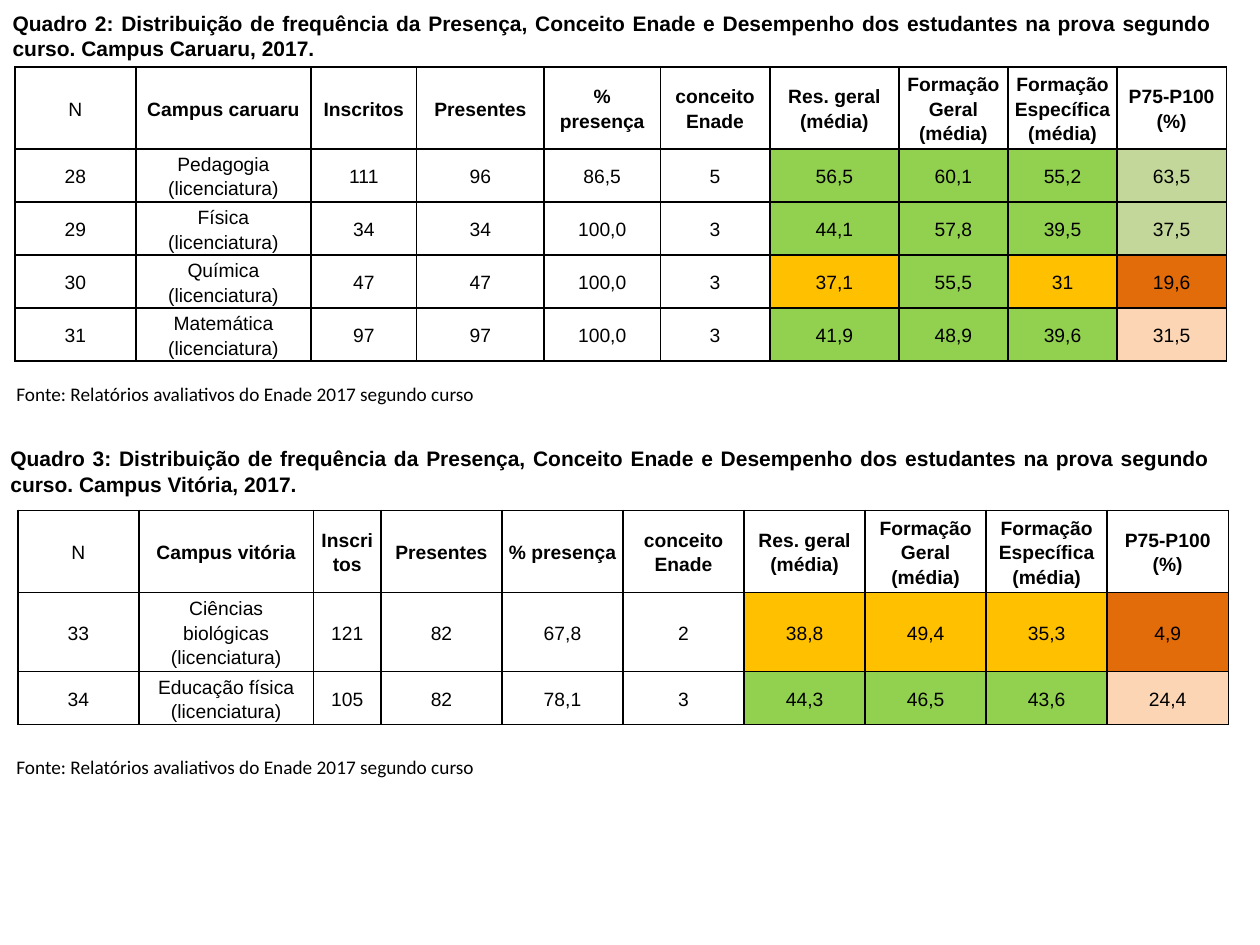
from dataclasses import dataclass

import lxml.etree
import pptx
import pptx.dml.color
import pptx.enum.text
import pptx.oxml.ns
import pptx.util

Cm = pptx.util.Cm
Pt = pptx.util.Pt
Align = pptx.enum.text.PP_ALIGN
Anchor = pptx.enum.text.MSO_ANCHOR

COLORS = {
    "text": "000000",
    "border": "000000",
    "high": "92D050",
    "medium": "FFC000",
    "top_good": "C4D79B",
    "top_fair": "FCD5B4",
    "top_low": "E26B0A",
}
HEADINGS = (
    "Inscritos", "Presentes", "% presença", "conceito Enade", "Res. geral (média)",
    "Formação Geral (média)", "Formação Específica (média)", "P75-P100 (%)",
)
FIRST_RATED_COLUMN = 6
SOURCE_NOTE = "Fonte: Relatórios avaliativos do Enade 2017 segundo curso"


@dataclass
class Course:
    values: tuple[str, ...]
    ratings: tuple[str, ...]
    height: float = 1.07


@dataclass
class Board:
    number: int
    campus: str
    table_heading: str
    caption_at: tuple[float, float]
    table_at: tuple[float, float]
    note_top: float
    widths: tuple[float, ...]
    courses: tuple[Course, ...]


BOARDS = (
    Board(
        2, "Caruaru", "Campus caruaru", (0, 0.08), (0.3, 1.35), 7.59,
        (2.44, 3.53, 2.13, 2.57, 2.34, 2.21, 2.6, 2.2, 2.2, 2.2),
        (
            Course(("28", "Pedagogia (licenciatura)", "111", "96", "86,5", "5",
                    "56,5", "60,1", "55,2", "63,5"), ("high", "high", "high", "top_good")),
            Course(("29", "Física (licenciatura)", "34", "34", "100,0", "3",
                    "44,1", "57,8", "39,5", "37,5"), ("high", "high", "high", "top_good")),
            Course(("30", "Química (licenciatura)", "47", "47", "100,0", "3",
                    "37,1", "55,5", "31", "19,6"), ("medium", "high", "medium", "top_low")),
            Course(("31", "Matemática (licenciatura)", "97", "97", "100,0", "3",
                    "41,9", "48,9", "39,6", "31,5"), ("high", "high", "high", "top_fair")),
        ),
    ),
    Board(
        3, "Vitória", "Campus vitória", (-0.04, 8.86), (0.36, 10.29), 15.11,
        (2.44, 3.52, 1.36) + (2.44,) * 7,
        (
            Course(("33", "Ciências biológicas (licenciatura)", "121", "82", "67,8", "2",
                    "38,8", "49,4", "35,3", "4,9"),
                   ("medium", "medium", "medium", "top_low"), 1.6),
            Course(("34", "Educação física (licenciatura)", "105", "82", "78,1", "3",
                    "44,3", "46,5", "43,6", "24,4"), ("high", "high", "high", "top_fair")),
        ),
    ),
)


def color(name: str) -> pptx.dml.color.RGBColor:
    return pptx.dml.color.RGBColor.from_string(COLORS[name])


def format_paragraph(para, size: float, font: str, bold: bool, align) -> None:
    para.alignment = align
    para.font.size = Pt(size)
    para.font.name = font
    para.font.bold = bold
    para.font.color.rgb = color("text")


def fill_box(box, text: str, size: float, font: str, bold: bool, align, anchor) -> None:
    frame = box.text_frame
    frame.text = text
    frame.word_wrap = True
    frame.auto_size = pptx.enum.text.MSO_AUTO_SIZE.NONE
    frame.vertical_anchor = anchor
    format_paragraph(frame.paragraphs[0], size, font, bold, align)


def add_borders(cell) -> None:
    properties = cell._tc.get_or_add_tcPr()
    for side in ("a:lnL", "a:lnR", "a:lnT", "a:lnB"):
        line = lxml.etree.SubElement(properties, pptx.oxml.ns.qn(side), w=str(Pt(1)))
        solid = lxml.etree.SubElement(line, pptx.oxml.ns.qn("a:solidFill"))
        lxml.etree.SubElement(solid, pptx.oxml.ns.qn("a:srgbClr"), val=COLORS["border"])


def format_cell(cell, text: str, bold: bool, rating: str | None) -> None:
    cell.text = text
    cell.vertical_anchor = Anchor.MIDDLE
    cell.margin_left = cell.margin_right = Cm(0.12)
    cell.margin_top = cell.margin_bottom = 0
    para = cell.text_frame.paragraphs[0]
    format_paragraph(para, 11, "Arial", bold, Align.CENTER)
    para.line_spacing = 1.15
    add_borders(cell)
    if rating:
        cell.fill.solid()
        cell.fill.fore_color.rgb = color(rating)
    else:
        cell.fill.background()


def add_board_table(slide, board: Board) -> None:
    header = Course(("N", board.table_heading) + HEADINGS, (), 1.65)
    rows = (header,) + board.courses
    left, top = board.table_at
    table = slide.shapes.add_table(
        len(rows), len(board.widths), Cm(left), Cm(top),
        Cm(sum(board.widths)), Cm(sum(row.height for row in rows)),
    ).table
    table.first_row = False
    table.horz_banding = False
    for column, width in zip(table.columns, board.widths):
        column.width = Cm(width)
    for row_index, row in enumerate(rows):
        table.rows[row_index].height = Cm(row.height)
        ratings = (None,) * FIRST_RATED_COLUMN + (row.ratings or (None,) * 4)
        for column_index, (text, rating) in enumerate(zip(row.values, ratings)):
            bold = row_index == 0 and column_index > 0
            format_cell(table.cell(row_index, column_index), text, bold, rating)


def add_board(slide, board: Board, caption_box) -> None:
    left, top = board.caption_at
    caption_box.left, caption_box.top = Cm(left), Cm(top)
    caption_box.width, caption_box.height = Cm(24.69), Cm(1.28)
    caption = (
        f"Quadro {board.number}: Distribuição de frequência da Presença, Conceito Enade e "
        f"Desempenho dos estudantes na prova segundo curso. Campus {board.campus}, 2017."
    )
    fill_box(caption_box, caption, 12, "Arial", True, Align.JUSTIFY, Anchor.MIDDLE)
    add_board_table(slide, board)
    note = slide.shapes.add_textbox(Cm(0.08), Cm(board.note_top), Cm(17.4), Cm(0.73))
    fill_box(note, SOURCE_NOTE, 11, "Calibri", False, Align.LEFT, Anchor.TOP)


def main() -> None:
    deck = pptx.Presentation()
    deck.slide_width, deck.slide_height = Cm(25.4), Cm(19.05)
    slide = deck.slides.add_slide(deck.slide_layouts[5])
    first, second = BOARDS
    add_board(slide, first, slide.shapes.title)
    add_board(slide, second, slide.shapes.add_textbox(0, 0, 0, 0))
    deck.save("out.pptx")


if __name__ == "__main__":
    main()
